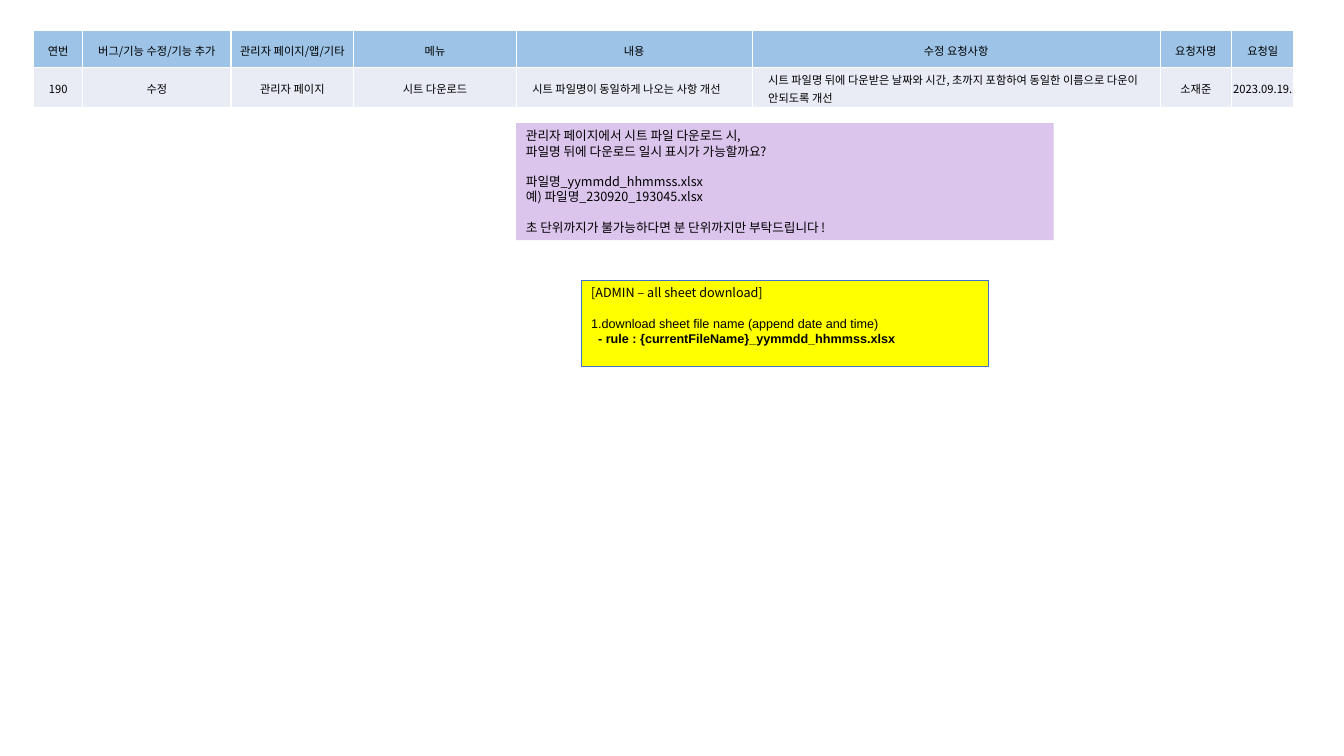
"""Build a change-request slide with a request table and two notes."""
from dataclasses import dataclass
from typing import Optional

import lxml.etree
import pptx
import pptx.dml.color
import pptx.enum.shapes
import pptx.enum.text
import pptx.oxml.ns
import pptx.presentation
import pptx.slide
import pptx.table
import pptx.text.text
import pptx.util

Pt = pptx.util.Pt
qn = pptx.oxml.ns.qn
KOREAN_FONT = "Noto Sans CJK KR"
TABLE_SIZE, TABLE_LEADING = 8, 12.9
NOTE_SIZE, NOTE_LEADING = 9, 10.9


@dataclass(frozen=True)
class Column:
    heading: str
    value: str
    width: float
    left_aligned: bool = False


@dataclass(frozen=True)
class Line:
    text: str
    font: str = KOREAN_FONT
    bold: bool = False
    starts_block: bool = False
    indent: float = 0


@dataclass(frozen=True)
class Note:
    left: float
    top: float
    width: float
    height: float
    fill: str
    lines: tuple[Line, ...]
    outline: Optional[str] = None


COLUMNS = (
    Column("연번", "190", 35.2),
    Column("버그/기능 수정/기능 추가", "수정", 105.8),
    Column("관리자 페이지/앱/기타", "관리자 페이지", 87.8),
    Column("메뉴", "시트 다운로드", 116),
    Column("내용", "시트 파일명이 동일하게 나오는 사항 개선", 168.5, True),
    Column("수정 요청사항",
           "시트 파일명 뒤에 다운받은 날짜와 시간, 초까지 포함하여 동일한 이름으로 다운이 안되도록 개선",
           291.5, True),
    Column("요청자명", "소재준", 51),
    Column("요청일", "2023.09.19.", 44.6),
)

NOTES = (
    Note(368.6, 88, 384, 83.5, "DCC5ED", (
        Line("관리자 페이지에서 시트 파일 다운로드 시,"),
        Line("파일명 뒤에 다운로드 일시 표시가 가능할까요?"),
        Line("파일명_yymmdd_hhmmss.xlsx", starts_block=True),
        Line("예) 파일명_230920_193045.xlsx"),
        Line("초 단위까지가 불가능하다면 분 단위까지만 부탁드립니다 !", starts_block=True),
    )),
    Note(415.2, 200.2, 291, 61.8, "FFFF00", (
        Line("[ADMIN – all sheet download]"),
        Line("1.download sheet file name (append date and time)", "Arial", starts_block=True),
        Line("- rule : {currentFileName}_yymmdd_hhmmss.xlsx", "Arial", True, indent=5),
    ), "4472C4"),
)


def color(value: str) -> pptx.dml.color.RGBColor:
    return pptx.dml.color.RGBColor.from_string(value)


def format_paragraph(paragraph: pptx.text.text._Paragraph, size: float, leading: float,
                     font: str = KOREAN_FONT, bold: bool = False) -> None:
    paragraph.line_spacing = Pt(leading)
    for run in paragraph.runs:
        run.font.size = Pt(size)
        run.font.name = font
        run.font.bold = bold
        run.font.color.rgb = color("000000")
        east_asian = lxml.etree.Element(qn("a:ea"), typeface=KOREAN_FONT)
        run.font._element.find(qn("a:latin")).addnext(east_asian)


def add_borders(cell: pptx.table._Cell, value: str) -> None:
    properties = cell._tc.get_or_add_tcPr()
    for side in ("a:lnL", "a:lnR", "a:lnT", "a:lnB"):
        border = lxml.etree.SubElement(properties, qn(side), w=str(Pt(1)))
        fill = lxml.etree.SubElement(border, qn("a:solidFill"))
        lxml.etree.SubElement(fill, qn("a:srgbClr"), val=value)


def fill_cell(cell: pptx.table._Cell, text: str, fill: str, left_aligned: bool) -> None:
    add_borders(cell, "FFFFFF")
    cell.fill.solid()
    cell.fill.fore_color.rgb = color(fill)
    cell.vertical_anchor = pptx.enum.text.MSO_ANCHOR.MIDDLE
    cell.margin_left = Pt(11.5 if left_aligned else 0.7)
    cell.margin_right = cell.margin_top = Pt(0.7)
    cell.margin_bottom = Pt(0)
    cell.text_frame.text = text
    paragraph = cell.text_frame.paragraphs[0]
    alignment = pptx.enum.text.PP_ALIGN
    paragraph.alignment = alignment.LEFT if left_aligned else alignment.CENTER
    format_paragraph(paragraph, TABLE_SIZE, TABLE_LEADING)


def add_request_table(slide: pptx.slide.Slide) -> None:
    width = sum(column.width for column in COLUMNS)
    table = slide.shapes.add_table(
        2, len(COLUMNS), Pt(24), Pt(21.8), Pt(width), Pt(54.8)).table
    table.first_row = table.horz_banding = False
    for row, height in zip(table.rows, (26.6, 28.2)):
        row.height = Pt(height)
    for index, column in enumerate(COLUMNS):
        table.columns[index].width = Pt(column.width)
        fill_cell(table.cell(0, index), column.heading, "9DC3E6", False)
        fill_cell(table.cell(1, index), column.value, "E9EBF5", column.left_aligned)


def add_note(slide: pptx.slide.Slide, note: Note) -> None:
    shape = slide.shapes.add_shape(
        pptx.enum.shapes.MSO_SHAPE.RECTANGLE,
        Pt(note.left), Pt(note.top), Pt(note.width), Pt(note.height))
    shape.shadow.inherit = False
    shape.fill.solid()
    shape.fill.fore_color.rgb = color(note.fill)
    if note.outline:
        shape.line.color.rgb = color(note.outline)
        shape.line.width = Pt(0.75)
    else:
        shape.line.fill.background()
    frame = shape.text_frame
    frame.word_wrap = True
    frame.vertical_anchor = pptx.enum.text.MSO_ANCHOR.TOP
    frame.text = "\n".join(line.text for line in note.lines)
    for paragraph, line in zip(frame.paragraphs, note.lines):
        paragraph.alignment = pptx.enum.text.PP_ALIGN.LEFT
        format_paragraph(paragraph, NOTE_SIZE, NOTE_LEADING, line.font, line.bold)
        if line.starts_block:
            paragraph.space_before = Pt(NOTE_LEADING)
        if line.indent:
            paragraph._p.get_or_add_pPr().set("marL", str(Pt(line.indent)))


def main() -> None:
    presentation = pptx.Presentation()
    presentation.slide_width, presentation.slide_height = Pt(960), Pt(540)
    slide = presentation.slides.add_slide(presentation.slide_layouts[6])
    add_request_table(slide)
    for note in NOTES:
        add_note(slide, note)
    presentation.save("out.pptx")


if __name__ == "__main__":
    main()
